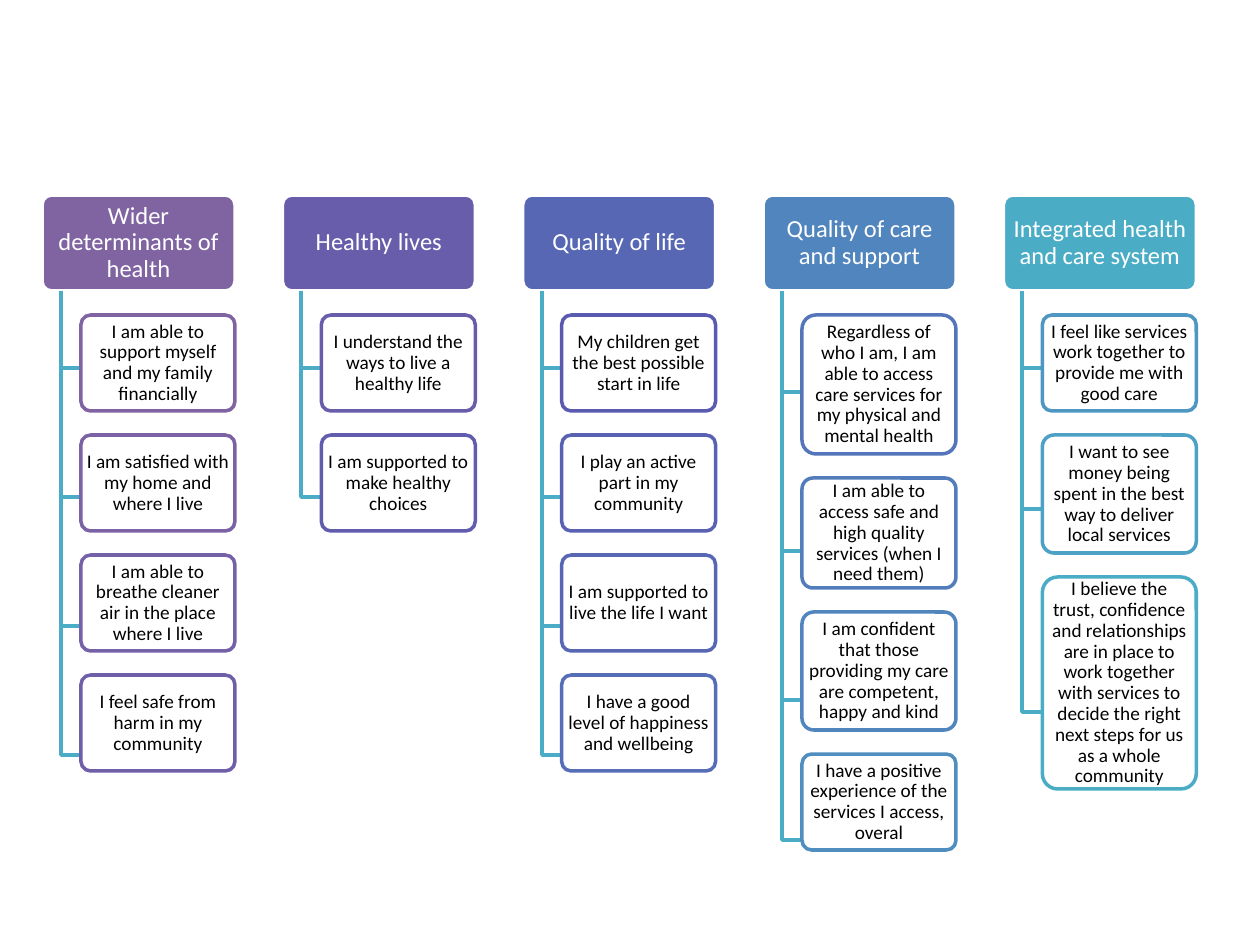
from lxml import etree
from pptx import Presentation
from pptx import util as u
from pptx.dml.color import RGBColor
from pptx.enum import shapes, text
from pptx.oxml.ns import qn

PX = 914400 / 126  # EMU in one px
PITCH = 240.35     # column to column
HEAD_W, HEAD_H = 193, 96
CARD_X, CARD_W = 39, 154
FIRST_CARD, GAP = 120, 24
STEM_X, ELBOW_X = 19, 40
STRETCH = 1.075    # elbows fall a little below the card centres
TEAL, WHITE, BLACK = "4BACC6", "FFFFFF", "000000"

# heading, heading colour, cards of (text, outline colour, height)
COLUMNS = [
    ("Wider determinants of health", "8064A2", [
        ("I am able to support myself and my family financially", "8064A2", 96),
        ("I am satisfied with my home and where I live", "7B62A4", 96),
        ("I am able to breathe cleaner air in the place where I live", "7561A7", 96),
        ("I feel safe from harm in my community", "6F5FA9", 96)]),
    ("Healthy lives", "685DAB", [
        ("I understand the ways to live a healthy life", "685DAB", 96),
        ("I am supported to make healthy choices", "615CAE", 96)]),
    ("Quality of life", "5767B4", [
        ("My children get the best possible start in life", "5A5BB0", 96),
        ("I play an active part in my community", "5961B2", 96),
        ("I am supported to live the life I want", "5767B4", 96),
        ("I have a good level of happiness and wellbeing", "566DB7", 96)]),
    ("Quality of care and support", "5185BD", [
        ("Regardless of who I am, I am able to access care services for my "
         "physical and mental health", "5475B9", 139),
        ("I am able to access safe and high quality services (when I need them)",
         "527CBB", 110),
        ("I am confident that those providing my care are competent, happy and kind",
         "5185BD", 118),
        ("I have a positive experience of the services I access, overal",
         "4F8EBF", 96)]),
    ("Integrated health and care system", "4BACC6", [
        ("I feel like services work together to provide me with good care",
         "4E97C2", 96),
        ("I want to see money being spent in the best way to deliver local services",
         "4CA1C4", 118),
        ("I believe the trust, confidence and relationships are in place to work "
         "together with services to decide the right next steps for us as a whole "
         "community", "4BACC6", 212)]),
]


def px(n):
    return u.Emu(round(n * PX))


def rgb(value):
    return RGBColor.from_string(value)


def set_line(sp, color):
    sp.shadow.inherit = False
    sp.line.color.rgb = rgb(color)
    sp.line.width = u.Pt(2)


def rounded_box(s, x, y, w, h, words, fill, line, color, size, margin):
    sp = s.shapes.add_shape(shapes.MSO_SHAPE.ROUNDED_RECTANGLE,
                            px(x), px(y), px(w), px(h))
    sp.adjustments[0] = 0.1
    sp.fill.solid()
    sp.fill.fore_color.rgb = rgb(fill)
    set_line(sp, line)
    tf = sp.text_frame
    tf.word_wrap = True
    tf.vertical_anchor = text.MSO_ANCHOR.MIDDLE
    tf.margin_left = tf.margin_right = px(margin)
    tf.margin_top = tf.margin_bottom = px(2)
    tf.text = words
    p = tf.paragraphs[0]
    p.alignment = text.PP_ALIGN.CENTER
    p.line_spacing = 0.9
    font = p.runs[0].font
    font.name, font.size = "Calibri", u.Pt(size)
    font.color.rgb = rgb(color)
    return sp


def elbow(s, x, top, end_y):
    """Line down the stem, then right to a card."""
    builder = s.shapes.build_freeform(x + STEM_X, top, scale=PX)
    builder.add_line_segments([(x + STEM_X, end_y), (x + ELBOW_X, end_y)],
                              close=False)
    sp = builder.convert_to_shape()
    sp.fill.background()
    set_line(sp, TEAL)


def card(s, x, y, h, words, line):
    sp = rounded_box(s, x, y, CARD_W, h, words, WHITE, line, BLACK, 11, 3)
    # Slightly see-through fill
    clr = sp._element.spPr.find(qn("a:solidFill")).find(qn("a:srgbClr"))
    etree.SubElement(clr, qn("a:alpha")).set("val", "90000")


def column(s, x, y, heading, color, cards):
    # Heading
    rounded_box(s, x, y, HEAD_W, HEAD_H, heading, color, WHITE, WHITE, 14, 4)
    # Cards, each hung from the stem
    stem_top = y + HEAD_H
    card_y = y + FIRST_CARD
    for words, line, h in cards:
        elbow(s, x, stem_top, stem_top + (card_y + h / 2 - stem_top) * STRETCH)
        card(s, x + CARD_X, card_y, h, words, line)
        card_y += h + GAP


def main():
    prs = Presentation()
    prs.slide_width, prs.slide_height = px(1260), px(945)
    s = prs.slides.add_slide(prs.slide_layouts[6])
    for i, (heading, color, cards) in enumerate(COLUMNS):
        column(s, 42 + i * PITCH, 195, heading, color, cards)
    prs.save("out.pptx")


if __name__ == "__main__":
    main()
